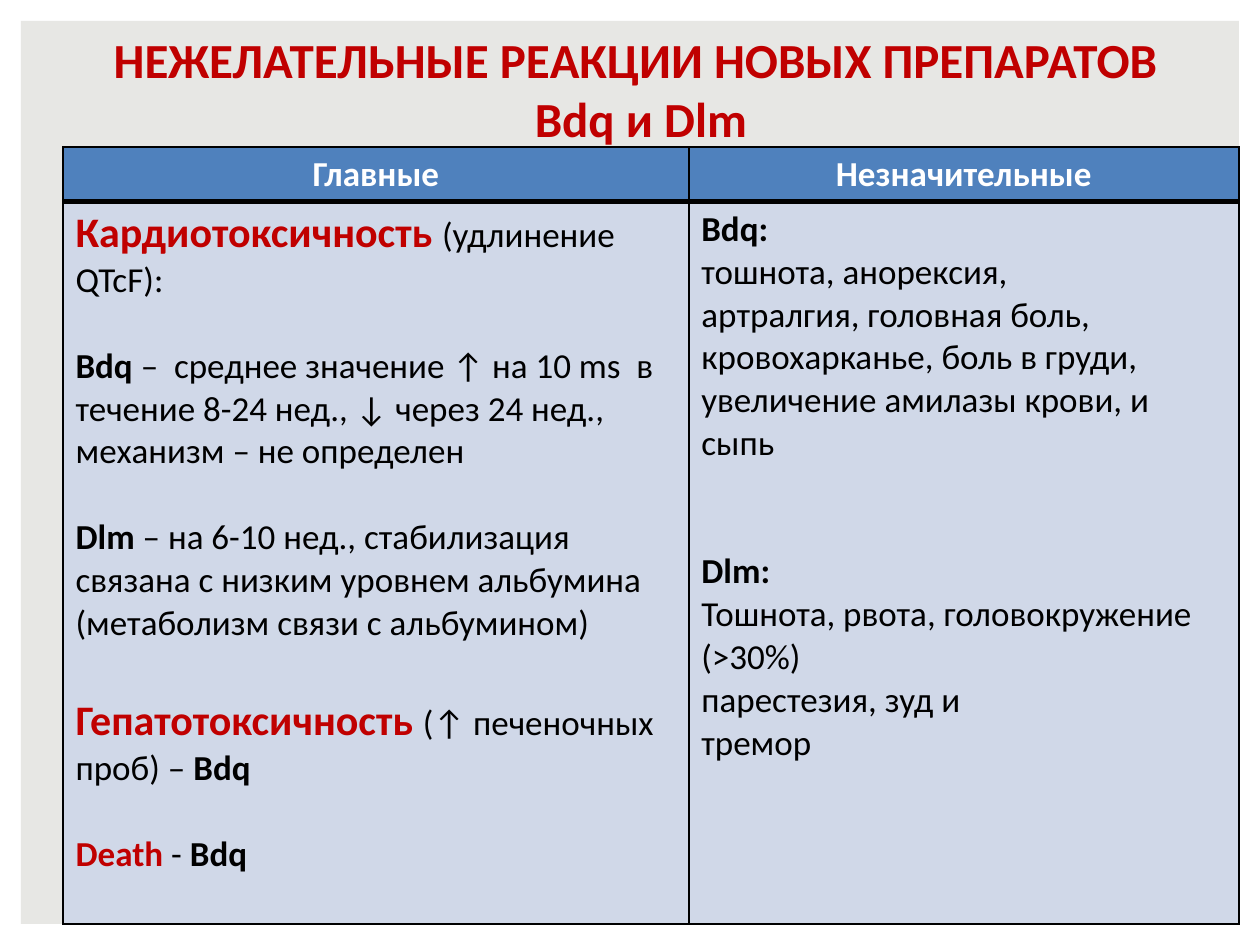
from dataclasses import dataclass
from lxml import etree
from pptx import Presentation
from pptx.dml.color import RGBColor
from pptx.enum.shapes import MSO_SHAPE
from pptx.enum.text import MSO_ANCHOR, PP_ALIGN
from pptx.oxml.ns import qn
from pptx.util import Inches, Pt

RECT = MSO_SHAPE.RECTANGLE
CENTER, LEFT = PP_ALIGN.CENTER, PP_ALIGN.LEFT
TOP, MIDDLE = MSO_ANCHOR.TOP, MSO_ANCHOR.MIDDLE
COLS, ROWS = 60, 45  # square grid cells across the 10 x 7.5 inch slide
UNIT = Inches(10) / COLS


@dataclass(frozen=True)
class Theme:
    font: str = "Calibri"
    black: str = "000000"
    white: str = "FFFFFF"
    red: str = "C00000"
    panel: str = "E7E7E4"
    head: str = "4F81BD"
    body: str = "D0D8E8"
    title: int = 28
    large: int = 24
    text: int = 20
    line: float = 1.22  # line height as a share of type size


THEME = Theme()


@dataclass(frozen=True)
class Span:
    text: str
    bold: bool = False
    color: str = THEME.black
    size: int = THEME.text


@dataclass(frozen=True)
class Para:
    spans: tuple[Span, ...]
    gap: float = 0  # space before, in points
    align: PP_ALIGN = LEFT


def grid(*cells: float) -> list[int]:
    return [round(cell * UNIT) for cell in cells]


def bold(text: str) -> Span:
    return Span(text, True)


def alarm(text: str, size: int = THEME.large) -> Span:
    return Span(text, True, THEME.red, size)


def head(text: str) -> list[Para]:
    return [Para((Span(text, True, THEME.white),), align=CENTER)]


def write(frame, paras: list[Para]) -> None:
    frame.word_wrap = True
    for i, para in enumerate(paras):
        p = frame.add_paragraph() if i else frame.paragraphs[0]
        p.alignment = para.align
        p.space_before = Pt(para.gap)
        for span in para.spans:
            if span.text == "\n":
                p.add_line_break()
                continue
            run = p.add_run()
            run.text = span.text
            font = run.font
            font.name, font.size, font.bold = THEME.font, Pt(span.size), span.bold
            font.color.rgb = RGBColor.from_string(span.color)


def edge(cell, side: str, width: float) -> None:
    """Draw one border; side is lnL, lnR, lnT or lnB, called in that order."""
    props = cell._tc.get_or_add_tcPr()
    line = etree.Element(qn(f"a:{side}"), w=str(Pt(width)))
    fill = etree.SubElement(line, qn("a:solidFill"))
    etree.SubElement(fill, qn("a:srgbClr"), val=THEME.black)
    fills = props.find(qn("a:solidFill"))
    fills.addprevious(line)


def add_panel(slide) -> None:
    panel = slide.shapes.add_shape(RECT, *grid(1, 1, COLS - 2, ROWS - 2))
    panel.shadow.inherit = False
    panel.fill.solid()
    panel.fill.fore_color.rgb = RGBColor.from_string(THEME.panel)
    panel.line.fill.background()


def add_title(slide, spans: tuple[Span, ...]) -> None:
    frame = slide.shapes.add_textbox(*grid(2.5, 1.4, 55.5, 5.6)).text_frame
    frame.margin_left = frame.margin_right = 0
    frame.margin_top = frame.margin_bottom = 0
    frame.vertical_anchor = MIDDLE
    write(frame, [Para(spans, align=CENTER)])


def add_grid(slide, rows: list[list[list[Para]]]) -> None:
    wide, high = (29.8, 26.2), (2.6, 34.4)
    box = grid(3, 7, sum(wide), sum(high))
    table = slide.shapes.add_table(len(high), len(wide), *box).table
    for col, width in zip(table.columns, grid(*wide)):
        col.width = width
    for r, height in enumerate(grid(*high)):
        table.rows[r].height = height
        for c, paras in enumerate(rows[r]):
            cell = table.cell(r, c)
            cell.vertical_anchor = TOP
            cell.fill.solid()
            tint = THEME.body if r else THEME.head
            cell.fill.fore_color.rgb = RGBColor.from_string(tint)
            sides = {"lnL": 1, "lnR": 1, "lnT": 3 if r else 1, "lnB": 1 if r else 3}
            for side, width in sides.items():
                edge(cell, side, width)
            write(cell.text_frame, paras)


def main() -> None:
    deck = Presentation()
    deck.slide_width, deck.slide_height = grid(COLS, ROWS)
    slide = deck.slides.add_slide(deck.slide_layouts[6])
    gap = THEME.text * THEME.line
    major = [
        Para((alarm("Кардиотоксичность "), Span("(удлинение QTcF):"))),
        Para((bold("Bdq"), Span(" –  среднее значение ↑ на 10 ms  в течение 8-24 нед., "
                                "↓ через 24 нед., механизм – не определен")), gap),
        Para((bold("Dlm"), Span(" – на 6-10 нед., стабилизация связана с низким уровнем "
                                "альбумина (метаболизм связи с альбумином)")), gap),
        Para((alarm("Гепатотоксичность "), Span("(↑ печеночных проб) – "), bold("Bdq")),
             THEME.large * THEME.line),
        Para((alarm("Death", THEME.text), Span(" - "), bold("Bdq")), gap),
    ]
    minor = [
        Para((bold("Bdq:"),)),
        Para((Span("тошнота, анорексия,"),)),
        Para((Span("артралгия, головная боль,"),)),
        Para((Span("кровохарканье, боль в груди, увеличение амилазы крови, и сыпь"),)),
        Para((bold("Dlm:"),), 2 * gap),
        Para((Span("Тошнота, рвота, головокружение (>30%)"),)),
        Para((Span("парестезия, зуд и"),)),
        Para((Span("тремор"),)),
    ]
    add_panel(slide)
    add_title(slide, (alarm("НЕЖЕЛАТЕЛЬНЫЕ РЕАКЦИИ НОВЫХ ПРЕПАРАТОВ", THEME.title),
                      Span("\n"), alarm(" Bdq и Dlm", THEME.title)))
    add_grid(slide, [[head("Главные"), head("Незначительные")], [major, minor]])
    deck.save("out.pptx")


if __name__ == "__main__":
    main()
